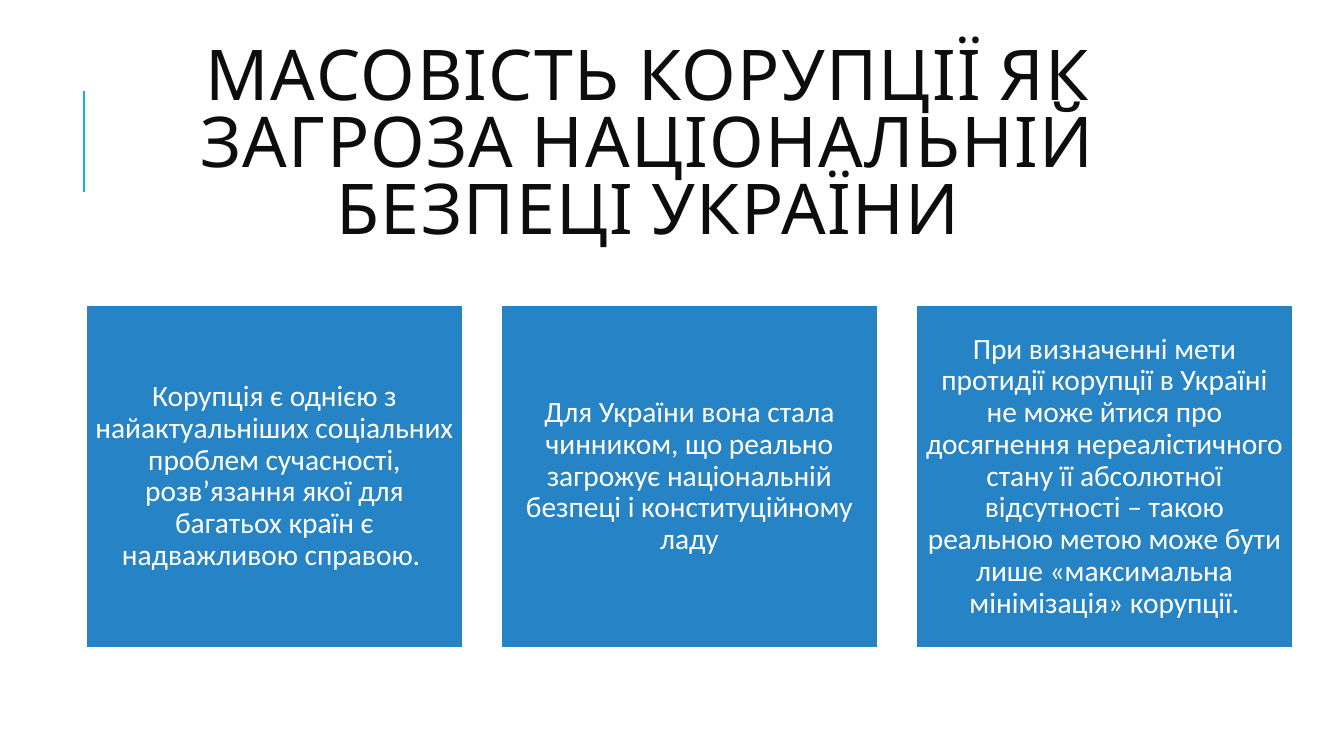
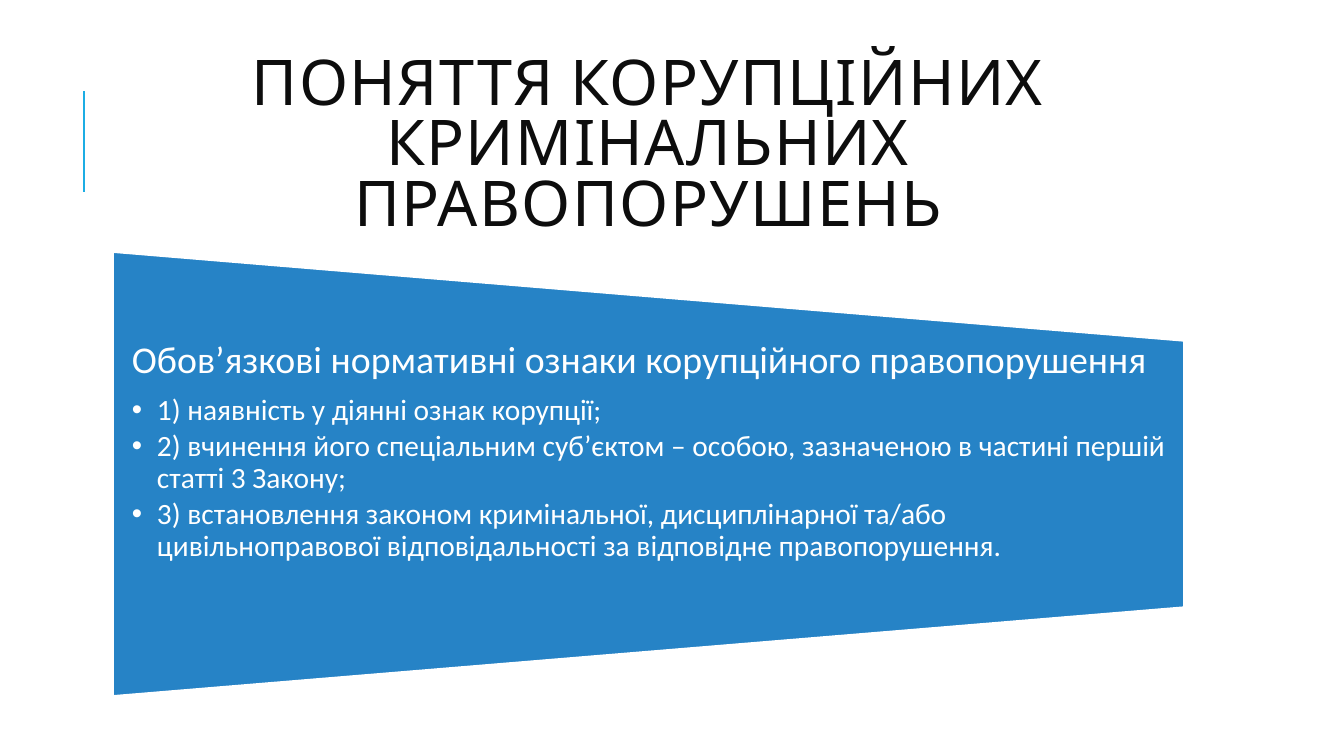
from lxml.etree import SubElement
from pptx import Presentation
from pptx.dml.color import RGBColor
from pptx.enum.shapes import MSO_CONNECTOR, MSO_SHAPE
from pptx.enum.text import MSO_ANCHOR, MSO_AUTO_SIZE, PP_ALIGN
from pptx.oxml.ns import qn
from pptx.util import Pt

EMU_PER_PX = 914400 / 100.8
WHITE = RGBColor(0xFF, 0xFF, 0xFF)
INK = RGBColor(0x0D, 0x0D, 0x0D)
BLUE = RGBColor(0x26, 0x83, 0xC6)
ACCENT = RGBColor(0x1C, 0xAD, 0xE4)
TITLE_FONT, BODY_FONT = "Cabin", "Calibri"

SLIDE_SIZE = (1344, 756)
TITLE_BOX = (113, 65, 1071, 165)
CARDS_BOX = (86, 305, 1207, 343)
PANEL_BOX = (113, 252, 1071, 444)
TITLE_ONLY, TITLE_AND_BODY = 5, 1

CARDS = [
    "Корупція є однією з найактуальніших соціальних проблем сучасності, "
    "розв’язання якої для багатьох країн є надважливою справою. ",
    "Для України вона стала чинником, що реально загрожує національній "
    "безпеці і конституційному ладу",
    "При визначенні мети протидії корупції в Україні не може йтися про "
    "досягнення нереалістичного стану її абсолютної відсутності – такою "
    "реальною метою може бути лише «максимальна мінімізація» корупції.",
]
FEATURES_HEADING = "Обов’язкові нормативні ознаки корупційного правопорушення"
FEATURES = [
    "1) наявність у діянні ознак корупції;",
    "2) вчинення його спеціальним суб’єктом – особою, зазначеною в частині "
    "першій статті 3 Закону;",
    "3) встановлення законом кримінальної, дисциплінарної та/або "
    "цивільноправової відповідальності за відповідне правопорушення.",
]


def px(length):
    return round(length * EMU_PER_PX)


def place(shape, box):
    shape.left, shape.top, shape.width, shape.height = map(px, box)


def set_frame(frame, anchor, insets):
    frame.word_wrap = True
    frame.auto_size = MSO_AUTO_SIZE.NONE
    frame.vertical_anchor = anchor
    (frame.margin_left, frame.margin_top,
     frame.margin_right, frame.margin_bottom) = map(px, insets)


def write(paragraph, text, size, font=BODY_FONT, color=WHITE,
          align=PP_ALIGN.LEFT, line_spacing=0.9, after=0):
    paragraph.text = text
    paragraph.alignment = align
    paragraph.line_spacing = line_spacing
    paragraph.space_before, paragraph.space_after = Pt(0), Pt(after)
    paragraph.font.name = font
    paragraph.font.size = Pt(size)
    paragraph.font.color.rgb = color


def set_bullet(paragraph, character=None, indent=0):
    properties = paragraph._p.get_or_add_pPr()
    properties.set("marL", str(px(indent)))
    properties.set("indent", str(-px(indent)))
    tag = "a:buChar" if character else "a:buNone"
    bullet = SubElement(properties, qn(tag))
    if character:
        bullet.set("char", character)
    # Bullets must come before the default run properties
    properties.find(qn("a:defRPr")).addprevious(bullet)


def add_block(slide, preset, box):
    shape = slide.shapes.add_shape(preset, *map(px, box))
    shape.shadow.inherit = False
    shape.fill.solid()
    shape.fill.fore_color.rgb = BLUE
    shape.line.color.rgb = WHITE
    shape.line.width = Pt(1.25)
    return shape


def add_titled_slide(presentation, layout, title_text, size):
    slide = presentation.slides.add_slide(presentation.slide_layouts[layout])
    # Accent line left of the title
    accent = slide.shapes.add_connector(
        MSO_CONNECTOR.STRAIGHT, px(84), px(192), px(84), px(91))
    accent.line.color.rgb = ACCENT
    accent.line.width = Pt(1.5)
    SubElement(accent._element.spPr, qn("a:effectLst"))
    # Title
    title = slide.shapes.title
    place(title, TITLE_BOX)
    set_frame(title.text_frame, MSO_ANCHOR.MIDDLE, (10, 5, 10, 5))
    paragraph = title.text_frame.paragraphs[0]
    write(paragraph, title_text, size, TITLE_FONT, INK, PP_ALIGN.CENTER, 0.8)
    paragraph._p.pPr.find(qn("a:defRPr")).set("spc", "100")
    return slide


def add_cards(slide, box, texts, gap=38):
    left, top, width, height = box
    card_width = (width - gap * (len(texts) - 1)) / len(texts)
    for column, text in enumerate(texts):
        card_left = left + column * (card_width + gap)
        card = add_block(slide, MSO_SHAPE.RECTANGLE,
                         (card_left, top, card_width, height))
        set_frame(card.text_frame, MSO_ANCHOR.MIDDLE, (9, 9, 9, 9))
        write(card.text_frame.paragraphs[0], text, 21, align=PP_ALIGN.CENTER)


def add_feature_panel(slide, box, heading, features):
    left, top, width, height = box
    # Tapered panel: an upright shape turned a quarter about its centre
    panel = add_block(slide, MSO_SHAPE.FLOWCHART_MANUAL_OPERATION,
                      (left + (width - height) / 2, top + (height - width) / 2,
                       height, width))
    panel.rotation = 270
    # List over the panel, inside its narrow end
    body = slide.placeholders[1]
    panel._element.addnext(body._element)
    place(body, (left, top + height / 5, width, height * 3 / 5))
    frame = body.text_frame
    set_frame(frame, MSO_ANCHOR.TOP, (19, 0, 18, 0))
    write(frame.paragraphs[0], heading, 27, after=9.45)
    set_bullet(frame.paragraphs[0])
    for feature in features:
        paragraph = frame.add_paragraph()
        paragraph.level = 1
        write(paragraph, feature, 21, after=3.15)
        set_bullet(paragraph, "•", 25)


def main():
    presentation = Presentation()
    presentation.slide_width, presentation.slide_height = map(px, SLIDE_SIZE)

    slide = add_titled_slide(
        presentation, TITLE_ONLY,
        "МАСОВІСТЬ КОРУПЦІЇ ЯК ЗАГРОЗА НАЦІОНАЛЬНІЙ БЕЗПЕЦІ УКРАЇНИ", 50)
    add_cards(slide, CARDS_BOX, CARDS)

    slide = add_titled_slide(
        presentation, TITLE_AND_BODY,
        "ПОНЯТТЯ КОРУПЦІЙНИХ КРИМІНАЛЬНИХ ПРАВОПОРУШЕНЬ", 45)
    add_feature_panel(slide, PANEL_BOX, FEATURES_HEADING, FEATURES)

    presentation.save("out.pptx")


if __name__ == "__main__":
    main()
